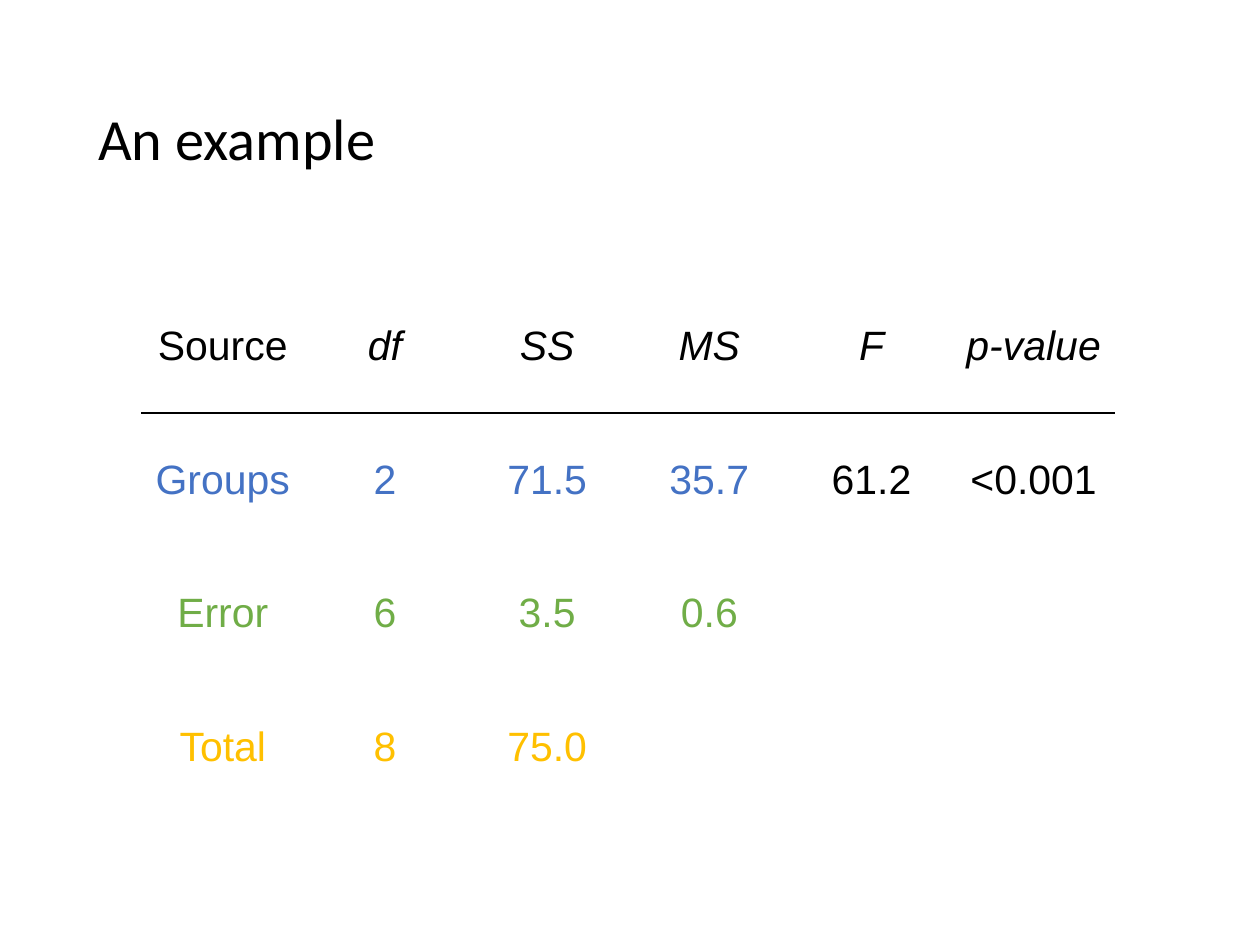
import dataclasses

import lxml.etree
import pptx
import pptx.dml.color
import pptx.enum.text
import pptx.oxml.ns
import pptx.util


@dataclasses.dataclass(frozen=True)
class Theme:
    title_font: str = "Calibri"
    table_font: str = "Arial"
    title_size: int = 37
    table_size: int = 26
    rule_width: int = 1
    ink: str = "000000"
    groups: str = "4472C4"
    error: str = "70AD47"
    total: str = "FFC000"


THEME = Theme()
WIDTH, HEIGHT = pptx.util.Inches(11.11), pptx.util.Inches(8.33)
COLUMN, ROW = pptx.util.Inches(1.43), pptx.util.Inches(1.18)
MIDDLE = pptx.enum.text.MSO_ANCHOR.MIDDLE

ANOVA = [
    ["Source", "df", "SS", "MS", "F", "p-value"],
    ["Groups", "2", "71.5", "35.7", "61.2", "<0.001"],
    ["Error", "6", "3.5", "0.6", "", ""],
    ["Total", "8", "75.0", "", "", ""],
]
ROW_COLORS = [THEME.ink, THEME.groups, THEME.error, THEME.total]
TEST_COLUMN = 4  # F and p-value stay in the ink colour


def set_font(p, name, size, color, italic=False):
    p.font.name = name
    p.font.size = pptx.util.Pt(size)
    p.font.italic = italic
    p.font.color.rgb = pptx.dml.color.RGBColor.from_string(color)


def add_title(slide, text):
    box = slide.shapes.add_textbox(
        int(WIDTH * 0.068), int(HEIGHT * 0.053), int(WIDTH * 0.862), int(HEIGHT * 0.193))
    tf = box.text_frame
    tf.word_wrap = True
    tf.vertical_anchor = MIDDLE
    tf.margin_left = tf.margin_right = pptx.util.Inches(0.11)
    p = tf.paragraphs[0]
    p.text = text
    p.line_spacing = 0.9
    set_font(p, THEME.title_font, THEME.title_size, THEME.ink)


def add_border(cell, side):
    tag = pptx.oxml.ns.qn
    line = lxml.etree.Element(tag("a:" + side), w=str(pptx.util.Pt(THEME.rule_width)))
    fill = lxml.etree.SubElement(line, tag("a:solidFill"))
    lxml.etree.SubElement(fill, tag("a:srgbClr"), val=THEME.ink)
    cell._tc.get_or_add_tcPr().insert(0, line)


def fill_cell(cell, text, color, italic):
    cell.fill.background()
    cell.vertical_anchor = MIDDLE
    cell.margin_left = cell.margin_right = pptx.util.Inches(0.05)
    p = cell.text_frame.paragraphs[0]
    p.alignment = pptx.enum.text.PP_ALIGN.CENTER
    if text:
        p.text = text
        set_font(p, THEME.table_font, THEME.table_size, color, italic)


def add_anova_table(slide, rows):
    n_rows, n_columns = len(rows), len(rows[0])
    table = slide.shapes.add_table(
        n_rows, n_columns, pptx.util.Inches(1.25), pptx.util.Inches(2.46),
        COLUMN * n_columns, ROW * n_rows).table
    table.first_row = table.horz_banding = False
    for i, values in enumerate(rows):
        for j, text in enumerate(values):
            cell = table.cell(i, j)
            color = THEME.ink if j >= TEST_COLUMN else ROW_COLORS[i]
            fill_cell(cell, text, color, italic=i == 0 and j > 0)
            # Rule between the header and the body
            if i < 2:
                add_border(cell, ("lnB", "lnT")[i])


def main():
    prs = pptx.Presentation()
    prs.slide_width, prs.slide_height = WIDTH, HEIGHT
    slide = prs.slides.add_slide(prs.slide_layouts[6])
    add_title(slide, "An example")
    add_anova_table(slide, ANOVA)
    prs.save("out.pptx")


if __name__ == "__main__":
    main()
